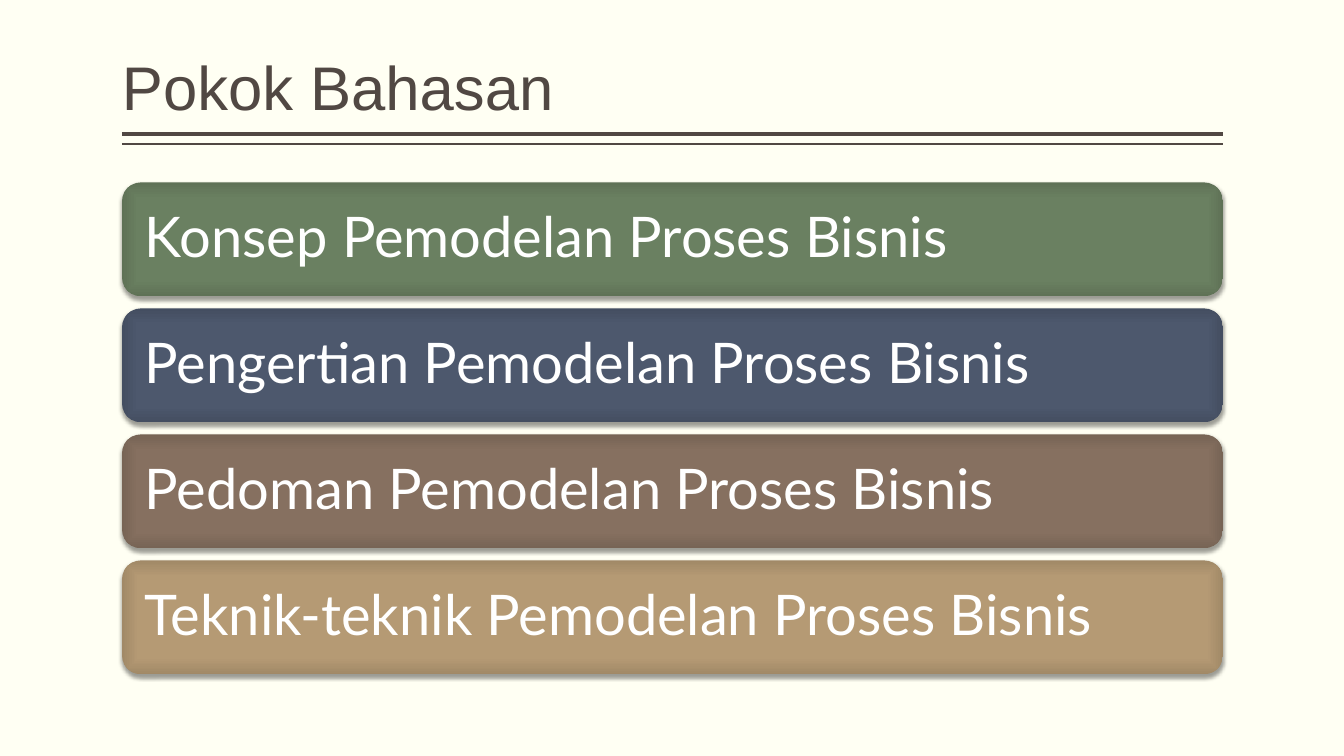
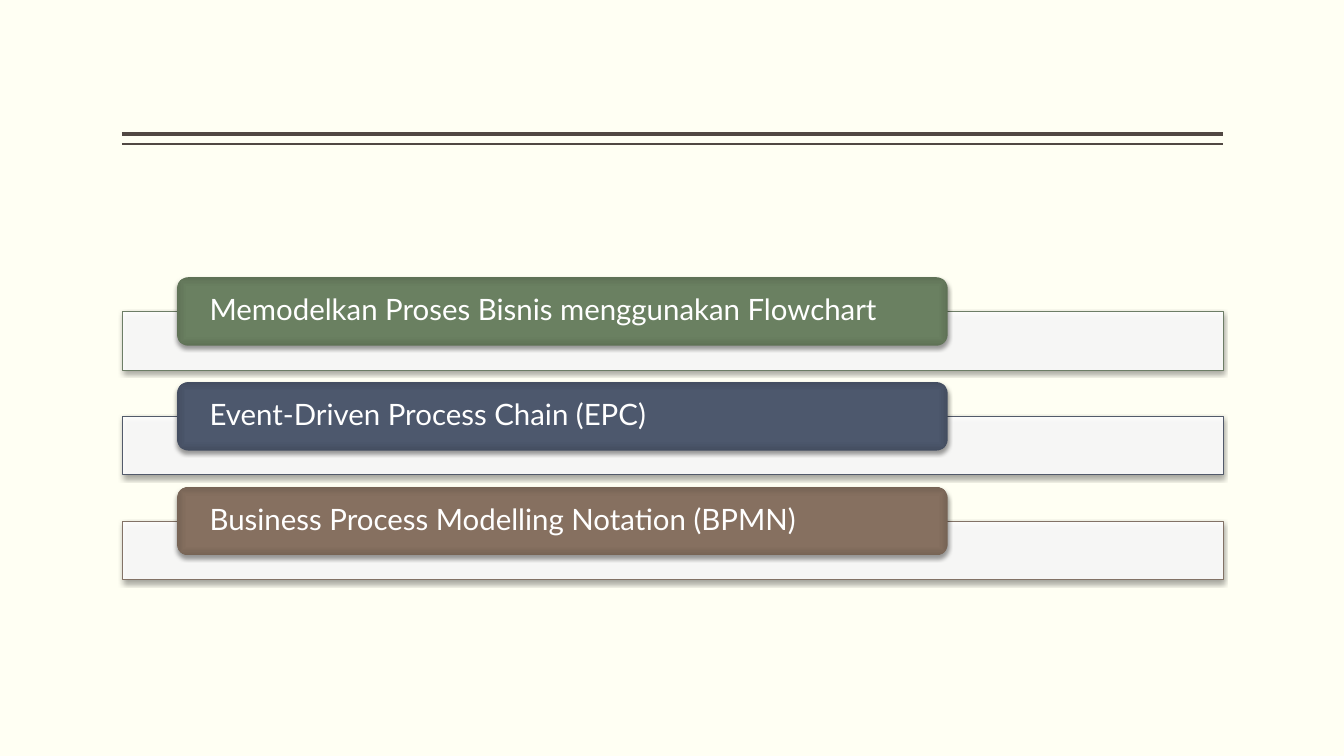
from dataclasses import dataclass

from lxml.etree import SubElement
from pptx import Presentation
from pptx.dml.color import RGBColor
from pptx.enum.shapes import MSO_CONNECTOR, MSO_SHAPE
from pptx.enum.text import MSO_ANCHOR, PP_ALIGN
from pptx.oxml import parse_xml
from pptx.oxml.ns import nsdecls, qn
from pptx.shapes.autoshape import Shape
from pptx.slide import Slide
from pptx.util import Inches, Pt


@dataclass(frozen=True)
class Accent:
    centre: str
    middle: str
    edge: str
    outline: str


@dataclass(frozen=True)
class Theme:
    paper: str = "FFFFF3"
    ink: str = "514843"
    white: str = "FFFFFF"
    title_font: str = "Arial"
    body_font: str = "Lato"
    title_size: float = 44
    topic_size: float = 40
    technique_size: float = 21
    accents: tuple[Accent, ...] = (
        Accent("6B8162", "6A8061", "5F7256", "6D7D66"),
        Accent("4E596E", "4D586D", "444E61", "525A6A"),
        Accent("877161", "867060", "776455", "827266"),
        Accent("B79B75", "B59A74", "A18967", "B59A74"),
    )


@dataclass(frozen=True)
class Area:
    left: float
    top: float
    width: float
    height: float

    def lengths(self) -> tuple[int, ...]:
        return tuple(Inches(n) for n in (self.left, self.top, self.width, self.height))


@dataclass(frozen=True)
class Rule:
    top: float
    weight: float


THEME = Theme()
WIDTH, HEIGHT = 13.33, 7.5
MARGIN = 1.21
CONTENT = 10.92
RULES = (Rule(1.33, 3), Rule(1.43, 1))

TOPICS = (
    "Konsep Pemodelan Proses Bisnis",
    "Pengertian Pemodelan Proses Bisnis",
    "Pedoman Pemodelan Proses Bisnis",
    "Teknik-teknik Pemodelan Proses Bisnis",
)
TOPIC_TOP, TOPIC_PITCH, TOPIC_HEIGHT = 1.81, 1.25, 1.13

TECHNIQUES = (
    "Memodelkan Proses Bisnis menggunakan Flowchart",
    "Event-Driven Process Chain (EPC)",
    "Business Process Modelling Notation (BPMN)",
)
LABEL_TOP, LABEL_PITCH, LABEL_HEIGHT = 2.75, 1.04, 0.68
LABEL_LEFT = MARGIN + CONTENT * 0.05
LABEL_WIDTH = CONTENT * 0.7
PANEL_HEIGHT = 0.58


def write(box: Shape, text: str, *, size: float, font: str, color: str,
          anchor: MSO_ANCHOR = MSO_ANCHOR.MIDDLE,
          side: float = 0, edge: float = 0) -> None:
    frame = box.text_frame
    frame.word_wrap = True
    frame.vertical_anchor = anchor
    frame.margin_left = frame.margin_right = Inches(side)
    frame.margin_top = frame.margin_bottom = Inches(edge)
    para = frame.paragraphs[0]
    para.alignment = PP_ALIGN.LEFT
    para.line_spacing = 0.9
    span = para.add_run()
    span.text = text
    span.font.size = Pt(size)
    span.font.name = font
    span.font.color.rgb = RGBColor.from_string(color)


def cast_shadow(shape: Shape) -> None:
    shape.shadow.inherit = False
    effects = shape._element.spPr.find(qn("a:effectLst"))
    effects.append(parse_xml(
        f'<a:outerShdw {nsdecls("a")} blurRad="39370" dist="25400" dir="5400000" '
        'algn="ctr" rotWithShape="0"><a:srgbClr val="000000">'
        '<a:alpha val="38000"/></a:srgbClr></a:outerShdw>'))


def add_bar(page: Slide, area: Area, accent: Accent) -> Shape:
    bar = page.shapes.add_shape(MSO_SHAPE.ROUNDED_RECTANGLE, *area.lengths())
    bar.fill.solid()
    bar.line.fill.background()
    stops = "".join(
        f'<a:gs pos="{position * 1000}"><a:srgbClr val="{color}"/></a:gs>'
        for position, color in ((0, accent.centre), (71, accent.middle), (100, accent.edge)))
    properties = bar._element.spPr
    properties.replace(properties.find(qn("a:solidFill")), parse_xml(
        f'<a:gradFill {nsdecls("a")} rotWithShape="1"><a:gsLst>{stops}</a:gsLst>'
        '<a:path path="rect"><a:fillToRect l="50000" t="50000" r="50000" b="50000"/>'
        '</a:path></a:gradFill>'))
    cast_shadow(bar)
    return bar


def add_panel(page: Slide, area: Area, accent: Accent) -> None:
    panel = page.shapes.add_shape(MSO_SHAPE.RECTANGLE, *area.lengths())
    panel.fill.solid()
    panel.fill.fore_color.rgb = RGBColor.from_string(THEME.white)
    color = panel._element.spPr.find(qn("a:solidFill")).find(qn("a:srgbClr"))
    SubElement(color, qn("a:alpha")).set("val", "90000")
    panel.line.color.rgb = RGBColor.from_string(accent.outline)
    panel.line.width = Pt(0.5)
    cast_shadow(panel)


def add_page(deck: Presentation, title: str = "") -> Slide:
    page = deck.slides.add_slide(deck.slide_layouts[6])
    page.background.fill.solid()
    page.background.fill.fore_color.rgb = RGBColor.from_string(THEME.paper)
    for rule in RULES:
        line = page.shapes.add_connector(
            MSO_CONNECTOR.STRAIGHT, Inches(MARGIN), Inches(rule.top),
            Inches(MARGIN + CONTENT), Inches(rule.top))
        line.line.color.rgb = RGBColor.from_string(THEME.ink)
        line.line.width = Pt(rule.weight)
        SubElement(line._element.spPr, qn("a:effectLst"))
    if title:
        box = page.shapes.add_textbox(*Area(MARGIN, 0.08, CONTENT, 1.2).lengths())
        write(box, title, size=THEME.title_size, font=THEME.title_font,
              color=THEME.ink, anchor=MSO_ANCHOR.BOTTOM, edge=0.05)
    return page


def build_topics(deck: Presentation) -> None:
    page = add_page(deck, "Pokok Bahasan")
    for row, (text, accent) in enumerate(zip(TOPICS, THEME.accents)):
        top = TOPIC_TOP + row * TOPIC_PITCH
        bar = add_bar(page, Area(MARGIN, top, CONTENT, TOPIC_HEIGHT), accent)
        write(bar, text, size=THEME.topic_size, font=THEME.body_font,
              color=THEME.white, side=0.17, edge=0.17)


def build_techniques(deck: Presentation) -> None:
    page = add_page(deck)
    for row, (text, accent) in enumerate(zip(TECHNIQUES, THEME.accents)):
        top = LABEL_TOP + row * LABEL_PITCH
        add_panel(page, Area(MARGIN, top + LABEL_HEIGHT / 2, CONTENT, PANEL_HEIGHT), accent)
        label = add_bar(page, Area(LABEL_LEFT, top, LABEL_WIDTH, LABEL_HEIGHT), accent)
        write(label, text, size=THEME.technique_size, font=THEME.body_font,
              color=THEME.white, side=0.29)


def main() -> None:
    deck = Presentation()
    deck.slide_width = Inches(WIDTH)
    deck.slide_height = Inches(HEIGHT)
    build_topics(deck)
    build_techniques(deck)
    deck.save("out.pptx")


if __name__ == "__main__":
    main()
